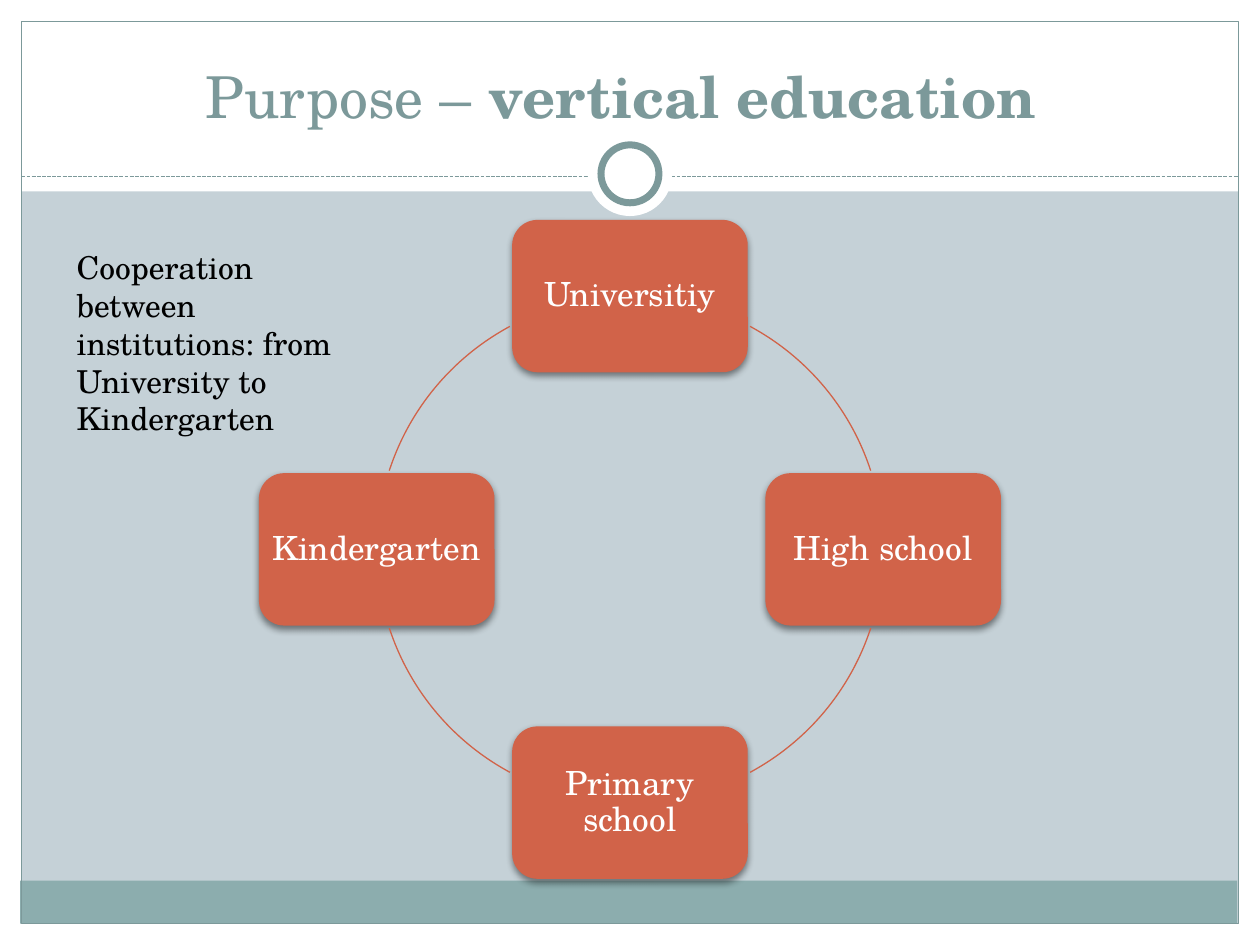
from math import cos, radians, sin

from lxml.etree import SubElement
from pptx import Presentation
from pptx.dml.color import RGBColor
from pptx.enum.dml import MSO_LINE
from pptx.enum.shapes import MSO_CONNECTOR, MSO_SHAPE
from pptx.enum.text import MSO_ANCHOR, PP_ALIGN
from pptx.oxml import parse_xml
from pptx.oxml.ns import nsdecls, qn
from pptx.util import Inches, Pt

COLOURS = {
    "background": "C5D1D7",
    "white": "FFFFFF",
    "black": "000000",
    "teal": "7C999A",
    "footer": "8CADAE",
    "orange": "D16349",
}
FONT = "TeX Gyre Schola"


def colour(name):
    return RGBColor.from_string(COLOURS[name])


class SlideBuilder:
    """Holds the style and the current slide."""

    def __init__(self, deck):
        self.page = deck.slides.add_slide(deck.slide_layouts[5])
        fill = self.page.background.fill
        fill.solid()
        fill.fore_color.rgb = colour("background")

    def style_text(self, paragraph, size, ink, align=PP_ALIGN.LEFT):
        paragraph.alignment = align
        paragraph.font.name = FONT
        paragraph.font.size = Pt(size)
        paragraph.font.color.rgb = colour(ink)

    def shape(self, kind, left, top, width, height, fill=None, line=None, weight=0.75):
        shape = self.page.shapes.add_shape(
            kind, Inches(left), Inches(top), Inches(width), Inches(height))
        shape.shadow.inherit = False
        if fill:
            shape.fill.solid()
            shape.fill.fore_color.rgb = colour(fill)
        else:
            shape.fill.background()
        if line:
            shape.line.color.rgb = colour(line)
            shape.line.width = Pt(weight)
        else:
            shape.line.fill.background()
        return shape

    def circle(self, centre_x, centre_y, size, **style):
        return self.shape(MSO_SHAPE.OVAL, centre_x - size / 2, centre_y - size / 2,
                          size, size, **style)

    def dashed_line(self, left, right, top):
        line = self.page.shapes.add_connector(
            MSO_CONNECTOR.STRAIGHT, Inches(left), Inches(top), Inches(right), Inches(top))
        line.line.color.rgb = colour("teal")
        line.line.width = Pt(0.75)
        line.line.dash_style = MSO_LINE.SQUARE_DOT
        SubElement(line._element.spPr, qn("a:effectLst"))

    def title(self, left, top, width, height, plain, bold):
        title = self.page.shapes.title
        title.left, title.top = Inches(left), Inches(top)
        title.width, title.height = Inches(width), Inches(height)
        frame = title.text_frame
        frame.vertical_anchor = MSO_ANCHOR.BOTTOM
        paragraph = frame.paragraphs[0]
        paragraph.add_run().text = plain
        span = paragraph.add_run()
        span.text = bold
        span.font.bold = True
        self.style_text(paragraph, 33, "teal", PP_ALIGN.CENTER)
        # Bring the title in front of the white header band
        self.page.shapes._spTree.append(title._element)

    def node(self, centre_x, centre_y, width, height, text):
        box = self.shape(MSO_SHAPE.ROUNDED_RECTANGLE, centre_x - width / 2,
                         centre_y - height / 2, width, height, fill="orange")
        self.soft_shadow(box)
        frame = box.text_frame
        frame.word_wrap = True
        frame.vertical_anchor = MSO_ANCHOR.MIDDLE
        # Narrow side margins keep the longest name on one line
        frame.margin_left = frame.margin_right = Inches(0.02)
        frame.margin_top = frame.margin_bottom = Inches(0.08)
        paragraph = frame.paragraphs[0]
        paragraph.text = text
        paragraph.line_spacing = 0.9
        self.style_text(paragraph, 19, "white", PP_ALIGN.CENTER)

    def soft_shadow(self, shape):
        properties = shape._element.spPr
        properties.remove(properties.find(qn("a:effectLst")))
        properties.append(parse_xml(
            f'<a:effectLst {nsdecls("a")}>'
            f'<a:outerShdw blurRad="{Pt(4)}" dist="{Pt(2)}" dir="5400000" rotWithShape="0">'
            f'<a:srgbClr val="{COLOURS["black"]}"><a:alpha val="45000"/></a:srgbClr>'
            '</a:outerShdw></a:effectLst>'))

    def arc(self, centre_x, centre_y, radius, start, end):
        arc = self.shape(MSO_SHAPE.ARC, centre_x - radius, centre_y - radius,
                         2 * radius, 2 * radius, line="orange")
        # Angles are stored in 1/60000 degree, adjustments in 1/100000
        arc.adjustments[0] = start * 0.6
        arc.adjustments[1] = end * 0.6

    def note(self, left, top, width, height, text):
        box = self.page.shapes.add_textbox(
            Inches(left), Inches(top), Inches(width), Inches(height))
        box.text_frame.word_wrap = True
        paragraph = box.text_frame.paragraphs[0]
        paragraph.text = text
        self.style_text(paragraph, 18, "black")


def main():
    deck = Presentation()
    deck.slide_width, deck.slide_height = Inches(10), Inches(7.5)
    slide = SlideBuilder(deck)

    # White margins, footer band and frame
    for margin in [(0, 7.33, 10, 0.17), (0, 0, 10, 1.52),
                   (0, 0, 0.17, 7.5), (9.83, 0, 0.17, 7.5)]:
        slide.shape(MSO_SHAPE.RECTANGLE, *margin, fill="white")
    slide.shape(MSO_SHAPE.RECTANGLE, 0.16, 6.99, 9.66, 0.34, fill="footer")
    slide.shape(MSO_SHAPE.RECTANGLE, 0.17, 0.17, 9.66, 7.16, line="teal")

    # Header divider with its ring
    slide.dashed_line(0.17, 9.83, 1.4)
    slide.circle(5, 1.38, 0.67, fill="white")
    slide.circle(5, 1.38, 0.46, fill="white", line="teal", weight=4)
    slide.title(0.33, 0.25, 9.33, 0.83, "Purpose – ", "vertical education ")

    # Cycle of institutions, clockwise from the top
    centre_x, centre_y, radius = 5, 4.36, 2.01
    institutions = ["Universitiy", "High school", "Primary school", "Kindergarten"]
    for index, name in enumerate(institutions):
        angle = radians(90 * index - 90)
        slide.node(centre_x + radius * cos(angle), centre_y + radius * sin(angle),
                   1.87, 1.21, name)

    # Arcs between the boxes, mirrored across both axes
    near, far = 18.1, 61.7
    for start, end in [(360 - far, 360 - near), (near, far),
                       (180 - far, 180 - near), (180 + near, 180 + far)]:
        slide.arc(centre_x, centre_y, radius, start, end)

    # Side note
    slide.note(0.51, 1.92, 2.36, 1.62,
               "Cooperation between institutions: from University to Kindergarten")

    deck.save("out.pptx")


if __name__ == "__main__":
    main()
